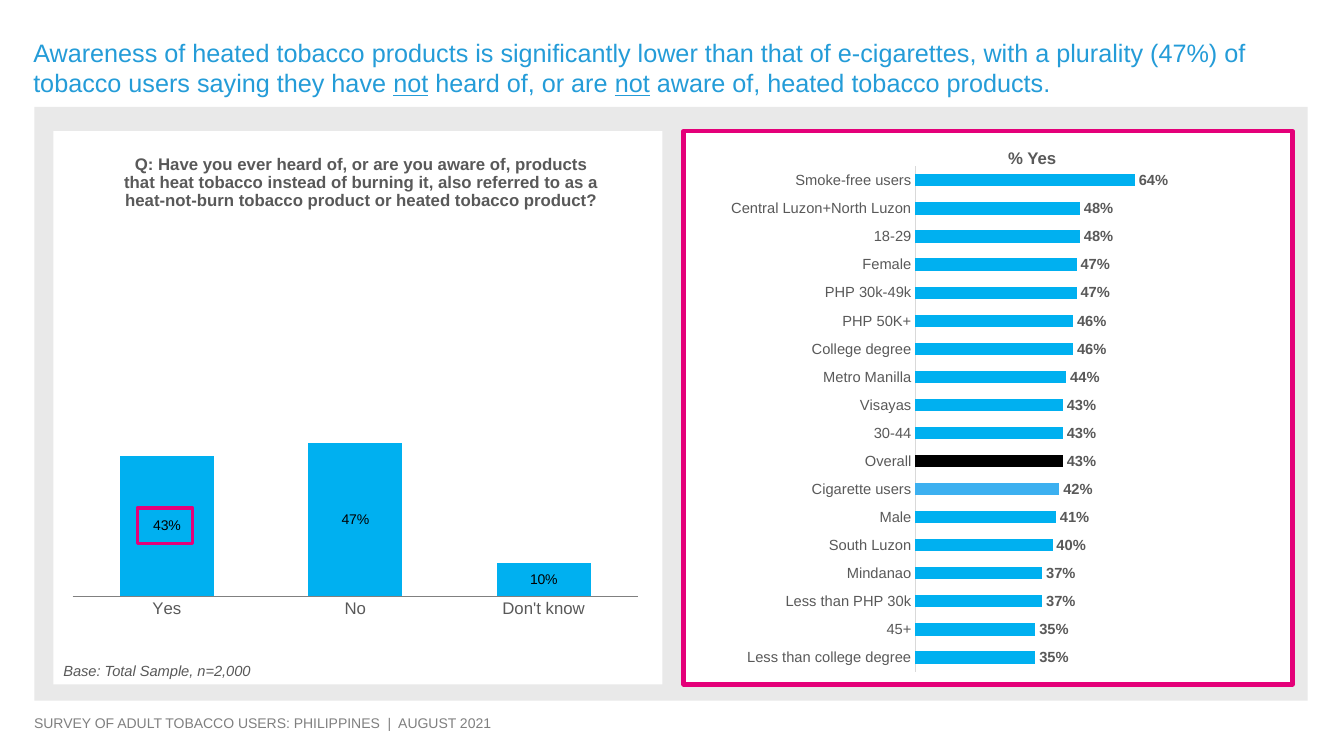
from lxml import etree
from pptx import Presentation
from pptx.chart.data import CategoryChartData
from pptx.dml.color import RGBColor
from pptx.enum import chart as ch, shapes, text
from pptx.oxml.ns import qn
from pptx.util import Inches, Pt

# Content
TITLE = [
    ("Awareness of heated tobacco products is significantly lower than that of "
     "e-cigarettes, with a plurality (47%) of tobacco users saying they have ", False),
    ("not", True), (" heard of, or are ", False), ("not", True),
    (" aware of, heated tobacco products.", False),
]
QUESTION = ("Q: Have you ever heard of, or are you aware of, products that heat tobacco "
            "instead of burning it, also referred to as a heat-not-burn tobacco product "
            "or heated tobacco product?")
ANSWERS = [("Yes", 0.43), ("No", 0.47), ("Don't know", 0.10)]
GROUPS = [  # bottom to top
    ("Less than college degree", 0.35), ("45+", 0.35), ("Less than PHP 30k", 0.37),
    ("Mindanao", 0.37), ("South Luzon", 0.40), ("Male", 0.41), ("Cigarette users", 0.42),
    ("Overall", 0.43), ("30-44", 0.43), ("Visayas", 0.43), ("Metro Manilla", 0.44),
    ("College degree", 0.46), ("PHP 50K+", 0.46), ("PHP 30k-49k", 0.47), ("Female", 0.47),
    ("18-29", 0.48), ("Central Luzon+North Luzon", 0.48), ("Smoke-free users", 0.64),
]
COLORS = {"panel": "E9E9E9", "white": "FFFFFF", "accent": "E40079", "title": "249CD8",
          "bar": "00B0F0", "cigarettes": "3CB0F0", "black": "000000", "text": "595959",
          "footer": "808080", "axis": "D9D9D9"}
HIGHLIGHTS = {"Cigarette users": "cigarettes", "Overall": "black"}
FONT = "Arial"

prs = Presentation()
prs.slide_width, prs.slide_height = Inches(13.33), Inches(7.5)
s = prs.slides.add_slide(prs.slide_layouts[5])


def rgb(name):
    return RGBColor.from_string(COLORS[name])


def style(font, size, color, bold=False, italic=False):
    font.name, font.size = FONT, Pt(size)
    font.bold, font.italic = bold, italic
    font.color.rgb = rgb(color)


def add_box(at, fill=None, line=None, width=0):
    sp = s.shapes.add_shape(shapes.MSO_SHAPE.RECTANGLE, *map(Inches, at))
    sp.shadow.inherit = False
    if fill:
        sp.fill.solid()
        sp.fill.fore_color.rgb = rgb(fill)
    else:
        sp.fill.background()
    if line:
        sp.line.color.rgb = rgb(line)
        sp.line.width = Pt(width)
    else:
        sp.line.fill.background()


def add_label(at, words, *font):
    tf = s.shapes.add_textbox(*map(Inches, at)).text_frame
    tf.word_wrap = True
    p = tf.paragraphs[0]
    p.text = words
    style(p.font, *font)


def set_layout(parent, **values):
    """Give a plot area or chart title a manual position, in chart fractions."""
    for old in parent.findall(qn("c:layout")):
        parent.remove(old)
    layout = etree.Element(qn("c:layout"))
    manual = etree.SubElement(layout, qn("c:manualLayout"))
    for tag, value in values.items():
        etree.SubElement(manual, qn("c:" + tag)).set("val", str(value))
    tx = parent.find(qn("c:tx"))
    parent.insert(0 if tx is None else parent.index(tx) + 1, layout)


def add_bars(kind, at, rows, plot_box, gap, axis_size, axis_color, label_font, label_pos):
    data = CategoryChartData(number_format="0%")
    data.categories = [name for name, _ in rows]
    data.add_series("Series 1", [value for _, value in rows])
    chart = s.shapes.add_chart(kind, *map(Inches, at), data).chart
    chart.has_legend = chart.has_title = False
    style(chart.font, axis_size, "text")

    value_axis = chart.value_axis
    value_axis.minimum_scale, value_axis.maximum_scale = 0, 1
    value_axis.has_major_gridlines = value_axis.visible = False
    axis = chart.category_axis
    axis.major_tick_mark = ch.XL_TICK_MARK.NONE
    axis.format.line.color.rgb = rgb(axis_color)
    axis.format.line.width = Pt(0.75)
    style(axis.tick_labels.font, axis_size, "text")

    plot = chart.plots[0]
    plot.gap_width, plot.vary_by_categories = gap, False
    series = plot.series[0]
    series.format.fill.solid()
    series.format.fill.fore_color.rgb = rgb("bar")
    for i, (name, _) in enumerate(rows):
        if name in HIGHLIGHTS:
            fill = series.points[i].format.fill
            fill.solid()
            fill.fore_color.rgb = rgb(HIGHLIGHTS[name])
    labels = series.data_labels
    labels.show_value, labels.position = True, label_pos
    labels.number_format, labels.number_format_is_linked = "0%", False
    style(labels.font, *label_font)

    x, y, w, h = plot_box
    set_layout(chart._chartSpace.chart.plotArea, layoutTarget="inner", xMode="edge",
               yMode="edge", x=x, y=y, w=w, h=h)
    return chart


# Title
title = s.shapes.title
title.left, title.top, title.width, title.height = map(Inches, (0.23, 0.06, 12.77, 0.96))
tf = title.text_frame
tf.word_wrap, tf.auto_size = True, text.MSO_AUTO_SIZE.NONE
tf.vertical_anchor = text.MSO_ANCHOR.BOTTOM
p = tf.paragraphs[0]
p.alignment = text.PP_ALIGN.LEFT
style(p.font, 18, "title")
for words, underlined in TITLE:
    r = p.add_run()
    r.text = words
    if underlined:
        r.font.underline = True

# Background panel and footer
add_box((0.34, 1.06, 12.63, 5.89), "panel")
add_label((0.24, 7.04, 12.43, 0.27),
          "SURVEY OF ADULT TOBACCO USERS: PHILIPPINES  |  AUGUST 2021", 10, "footer")

# Left card: answers to the question
add_box((0.53, 1.3, 6.04, 5.49), "white")
add_label((0.53, 6.52, 4.65, 0.29), "Base: Total Sample, n=2,000", 10.5, "text", False, True)
chart = add_bars(ch.XL_CHART_TYPE.COLUMN_CLUSTERED, (0.54, 1.3, 6.01, 5.01), ANSWERS,
                 (0.03, 0.275, 0.933, 0.646), 100, 12, "footer",
                 (10, "black"), ch.XL_LABEL_POSITION.CENTER)
chart.has_title = True
p = chart.chart_title.text_frame.paragraphs[0]
p.text = QUESTION
style(p.font, 12, "text", True)
chart.chart_title.include_in_layout = False
set_layout(chart.chart_title._element, xMode="edge", yMode="edge", x=0.11, y=0.04)
add_box((1.36, 5.04, 0.55, 0.35), None, "accent", 2.25)

# Right card: share of "Yes" by group
add_box((6.78, 1.3, 6.04, 5.49), "white", "accent", 3)
add_label((9.9, 1.42, 1.05, 0.3), "% Yes", 12, "text", True)
add_bars(ch.XL_CHART_TYPE.BAR_CLUSTERED, (6.81, 1.3, 6.02, 5.49), GROUPS,
         (0.377, 0.064, 0.565, 0.913), 130, 10.5, "axis",
         (10.5, "text", True), ch.XL_LABEL_POSITION.OUTSIDE_END)

prs.save("out.pptx")
